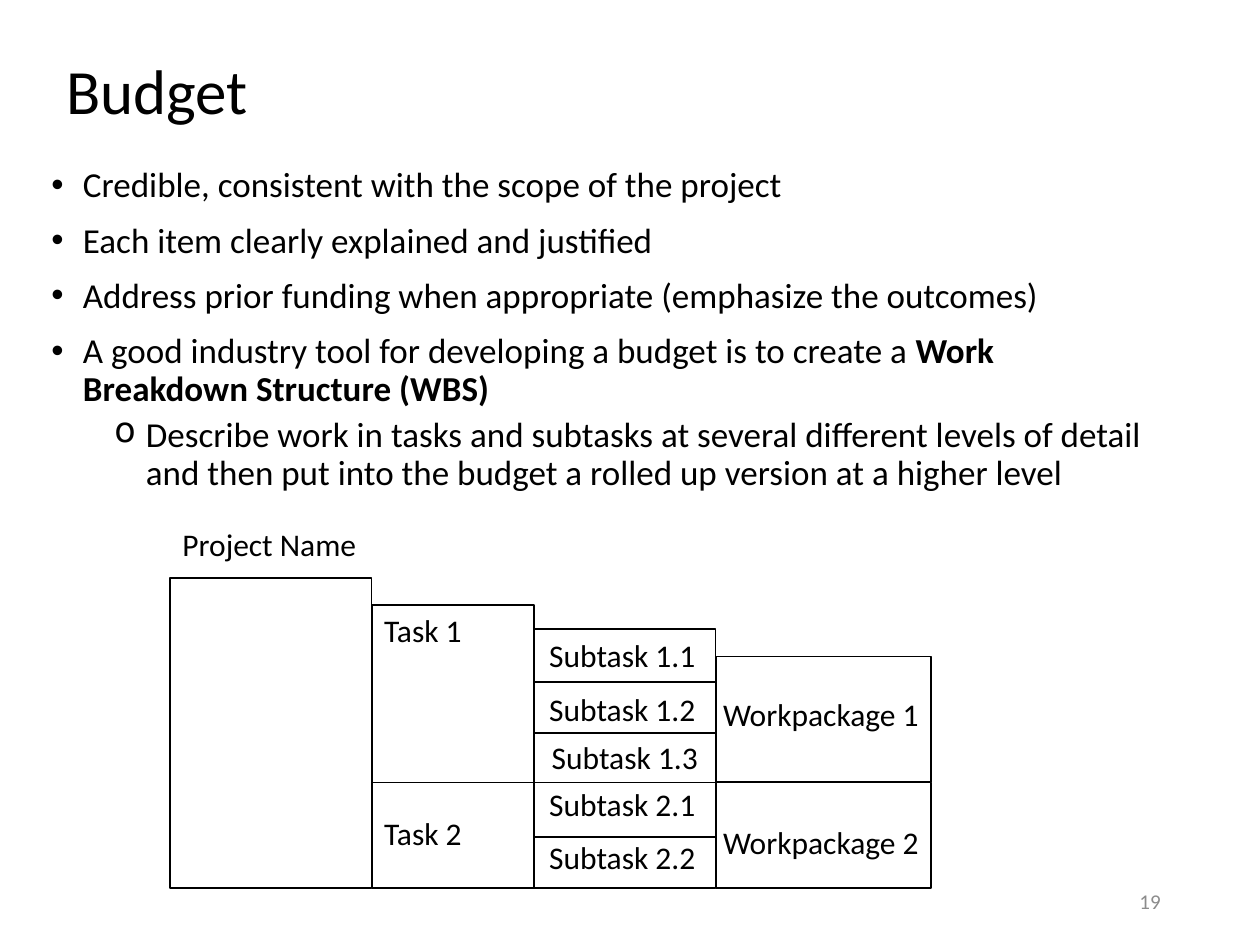
from typing import NamedTuple

from lxml.etree import SubElement
from pptx import Presentation
from pptx.dml.color import RGBColor
from pptx.enum.shapes import MSO_SHAPE
from pptx.enum.text import MSO_ANCHOR, PP_ALIGN
from pptx.oxml.ns import qn
from pptx.slide import Slide
from pptx.text.text import TextFrame, _Paragraph
from pptx.util import Inches, Pt

FONT = "Calibri"
BLACK = "000000"
GRAY = "8C8C8C"


class Box(NamedTuple):
    left: float
    top: float
    width: float
    height: float


class Label(NamedTuple):
    text: str
    box: Box


class Column(NamedTuple):
    """One level of the work breakdown: cells stacked between the edges."""
    left: float
    width: float
    edges: tuple[float, ...]


class Bullet(NamedTuple):
    text: str
    bold_text: str = ""
    level: int = 0


BULLETS = [
    Bullet("Credible, consistent with the scope of the project"),
    Bullet("Each item clearly explained and justified"),
    Bullet("Address prior funding when appropriate (emphasize the outcomes)"),
    Bullet("A good industry tool for developing a budget is to create a ",
           "Work Breakdown Structure (WBS)"),
    Bullet("Describe work in tasks and subtasks at several different levels of detail "
           "and then put into the budget a rolled up version at a higher level", level=1),
]

COLUMNS = [
    Column(1.35, 1.6, (4.59, 7.05)),
    Column(2.95, 1.29, (4.8, 6.21, 7.05)),
    Column(4.24, 1.44, (4.99, 5.41, 5.82, 6.21, 6.64, 7.05)),
    Column(5.68, 1.71, (5.21, 6.21, 7.05)),
]

LABELS = [
    Label("Project Name", Box(1.35, 4.12, 1.6, 2.83)),
    Label("Task 1", Box(2.95, 4.8, 1.31, 1.62)),
    Label("Task 2", Box(2.95, 6.41, 1.31, 0.71)),
    Label("Subtask 1.1", Box(4.26, 5, 1.42, 0.71)),
    Label("Subtask 1.2", Box(4.26, 5.43, 1.42, 0.4)),
    Label("Subtask 1.3", Box(4.28, 5.81, 1.42, 0.4)),
    Label("Subtask 2.1", Box(4.26, 6.18, 1.42, 0.4)),
    Label("Subtask 2.2", Box(4.26, 6.6, 1.42, 0.4)),
    Label("Workpackage 1", Box(5.64, 5.47, 1.78, 0.4)),
    Label("Workpackage 2", Box(5.64, 6.48, 1.78, 0.4)),
]


def color(hex_string: str) -> RGBColor:
    return RGBColor.from_string(hex_string)


def set_font(paragraph: _Paragraph, size: float, hex_string: str = BLACK) -> None:
    font = paragraph.font
    font.name = FONT
    font.size = Pt(size)
    font.color.rgb = color(hex_string)


def add_text_frame(slide: Slide, box: Box) -> TextFrame:
    shape = slide.shapes.add_textbox(*(Inches(length) for length in box))
    shape.text_frame.word_wrap = True
    return shape.text_frame


def add_label(slide: Slide, label: Label, size: float = 18,
              hex_string: str = BLACK, anchor: MSO_ANCHOR = MSO_ANCHOR.TOP) -> _Paragraph:
    text_frame = add_text_frame(slide, label.box)
    text_frame.vertical_anchor = anchor
    paragraph = text_frame.paragraphs[0]
    paragraph.text = label.text
    set_font(paragraph, size, hex_string)
    return paragraph


def set_bullet(paragraph: _Paragraph, level: int) -> None:
    properties = paragraph._p.get_or_add_pPr()
    properties.set("marL", str(Inches(0.25 + 0.5 * level)))
    properties.set("indent", str(Inches(-0.25)))
    if level == 0:
        SubElement(properties, qn("a:buFont")).set("typeface", "Arial")
    SubElement(properties, qn("a:buChar")).set("char", "•o"[level])


def add_bullets(slide: Slide, box: Box, bullets: list[Bullet]) -> None:
    text_frame = add_text_frame(slide, box)
    for index, bullet in enumerate(bullets):
        paragraph = text_frame.add_paragraph() if index else text_frame.paragraphs[0]
        paragraph.level = bullet.level
        set_bullet(paragraph, bullet.level)
        paragraph.line_spacing = 0.9
        paragraph.space_before = Pt((10, 5)[bullet.level] if index else 0)
        set_font(paragraph, 20)
        paragraph.add_run().text = bullet.text
        if bullet.bold_text:
            run = paragraph.add_run()
            run.text = bullet.bold_text
            run.font.bold = True


def add_column(slide: Slide, column: Column) -> None:
    for top, bottom in zip(column.edges, column.edges[1:]):
        cell = slide.shapes.add_shape(
            MSO_SHAPE.RECTANGLE, Inches(column.left), Inches(top),
            Inches(column.width), Inches(bottom - top))
        cell.shadow.inherit = False
        cell.fill.background()
        cell.line.color.rgb = color(BLACK)
        cell.line.width = Pt(1)


def main() -> None:
    presentation = Presentation()
    presentation.slide_width = Inches(10)
    presentation.slide_height = Inches(7.5)
    slide = presentation.slides.add_slide(presentation.slide_layouts[6])

    title = add_label(slide, Label("Budget", Box(0.43, 0.02, 9.13, 1.45)), 36,
                      anchor=MSO_ANCHOR.MIDDLE)
    title.line_spacing = 0.9
    add_bullets(slide, Box(0.31, 1.28, 8.92, 2.99), BULLETS)
    page_number = add_label(slide, Label("19", Box(7.06, 6.95, 2.25, 0.4)), 12, GRAY,
                            MSO_ANCHOR.MIDDLE)
    page_number.alignment = PP_ALIGN.RIGHT

    for column in COLUMNS:
        add_column(slide, column)
    for label in LABELS:
        add_label(slide, label)

    presentation.save("out.pptx")


if __name__ == "__main__":
    main()
